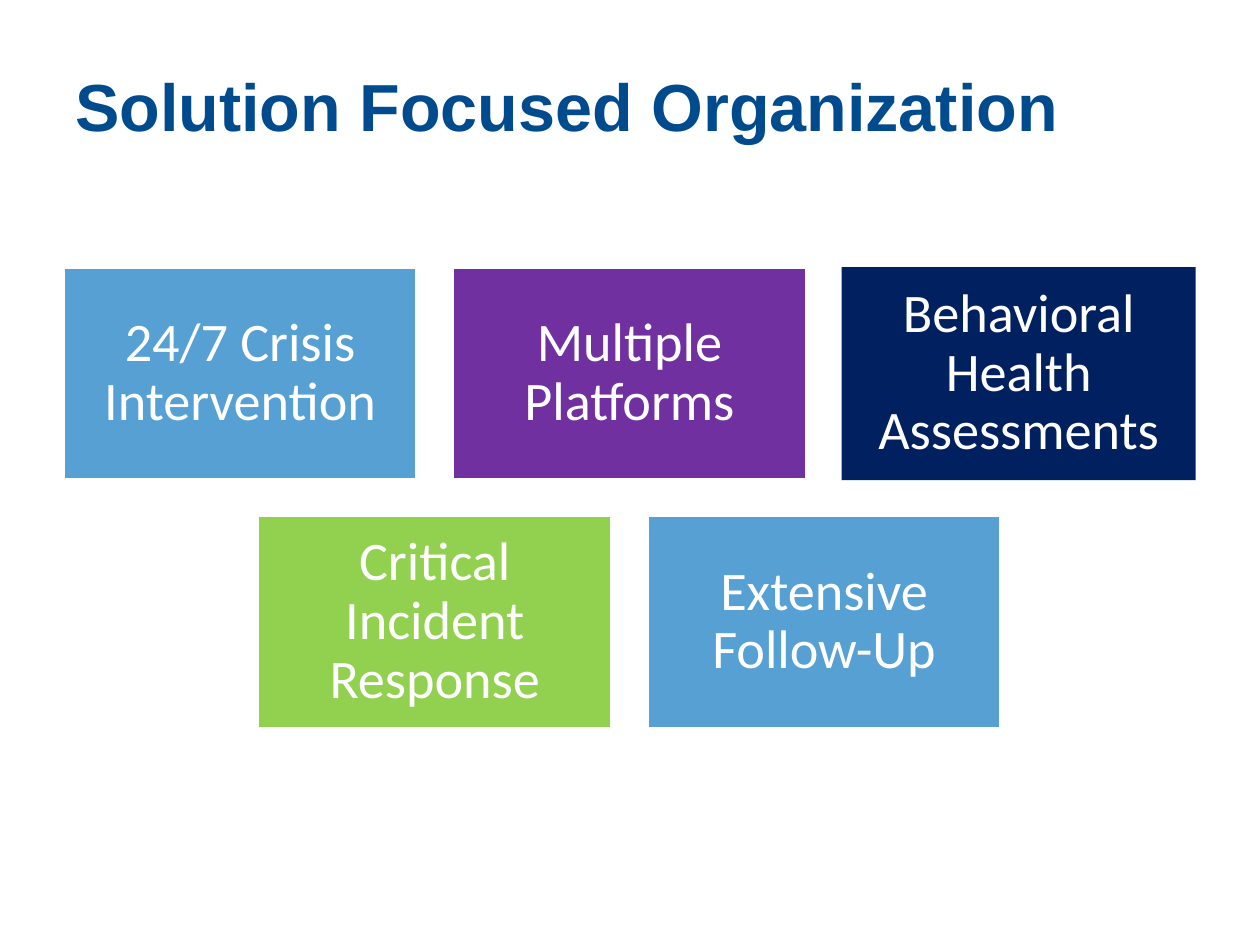
from pptx import Presentation
from pptx import util as u
from pptx.dml.color import RGBColor
from pptx.enum import shapes, text

WHITE = RGBColor(0xFF, 0xFF, 0xFF)
TITLE_BLUE = RGBColor(0x00, 0x4B, 0x8D)
SKY = RGBColor(0x56, 0xA0, 0xD3)
PURPLE = RGBColor(0x70, 0x30, 0xA0)
NAVY = RGBColor(0x00, 0x20, 0x60)
GREEN = RGBColor(0x92, 0xD0, 0x50)

# Grid of service tiles, in inches
LEFT, TOP = 0.5, 2.12
TILE_W, TILE_H, GAP = 2.81, 1.69, 0.28
COLUMNS = 3


def write(frame, words, *, font, size, color, bold=False,
          align=text.PP_ALIGN.LEFT, spacing=1.0, inset=None):
    """Fill a text frame with one formatted paragraph."""
    frame.word_wrap = True
    frame.vertical_anchor = text.MSO_ANCHOR.MIDDLE
    if inset is not None:
        frame.margin_left = frame.margin_right = u.Inches(inset)
        frame.margin_top = frame.margin_bottom = u.Inches(inset)
    paragraph = frame.paragraphs[0]
    paragraph.alignment = align
    paragraph.line_spacing = spacing
    run = paragraph.add_run()
    run.text = words
    run.font.name, run.font.size = font, u.Pt(size)
    run.font.bold, run.font.color.rgb = bold, color


class Deck:
    """Holds the style and the current slide."""
    title_style = dict(font="Arial", size=38, color=TITLE_BLUE, bold=True)
    tile_style = dict(font="Calibri", size=31, color=WHITE, spacing=0.9,
                      align=text.PP_ALIGN.CENTER, inset=0.13)

    def __init__(self, width, height):
        self.prs = Presentation()
        self.prs.slide_width = u.Inches(width)
        self.prs.slide_height = u.Inches(height)
        self.slide = self.prs.slides.add_slide(self.prs.slide_layouts[6])

    def title(self, words):
        box = self.slide.shapes.add_textbox(
            u.Inches(LEFT), u.Inches(0.21), u.Inches(9), u.Inches(1.25))
        write(box.text_frame, words, **self.title_style)

    def tile(self, column, row, words, fill, outlined=True):
        tile = self.slide.shapes.add_shape(
            shapes.MSO_SHAPE.RECTANGLE,
            u.Inches(LEFT + column * (TILE_W + GAP)),
            u.Inches(TOP + row * (TILE_H + GAP)),
            u.Inches(TILE_W), u.Inches(TILE_H))
        tile.shadow.inherit = False
        tile.fill.solid()
        tile.fill.fore_color.rgb = fill
        if outlined:
            tile.line.color.rgb = WHITE
            tile.line.width = u.Pt(2)
        else:
            tile.line.fill.background()
        write(tile.text_frame, words, **self.tile_style)

    def tile_row(self, row, services):
        """Centre a row of tiles on the grid."""
        first = (COLUMNS - len(services)) / 2
        for i, service in enumerate(services):
            self.tile(first + i, row, *service)


def main():
    deck = Deck(10, 7.5)
    deck.title("Solution Focused Organization")

    # Services: three above, two below
    deck.tile_row(0, [
        ("24/7 Crisis Intervention", SKY),
        ("Multiple Platforms", PURPLE),
        ("Behavioral Health Assessments", NAVY, False),
    ])
    deck.tile_row(1, [
        ("Critical Incident Response", GREEN),
        ("Extensive Follow-Up", SKY),
    ])
    deck.prs.save("out.pptx")


if __name__ == "__main__":
    main()
